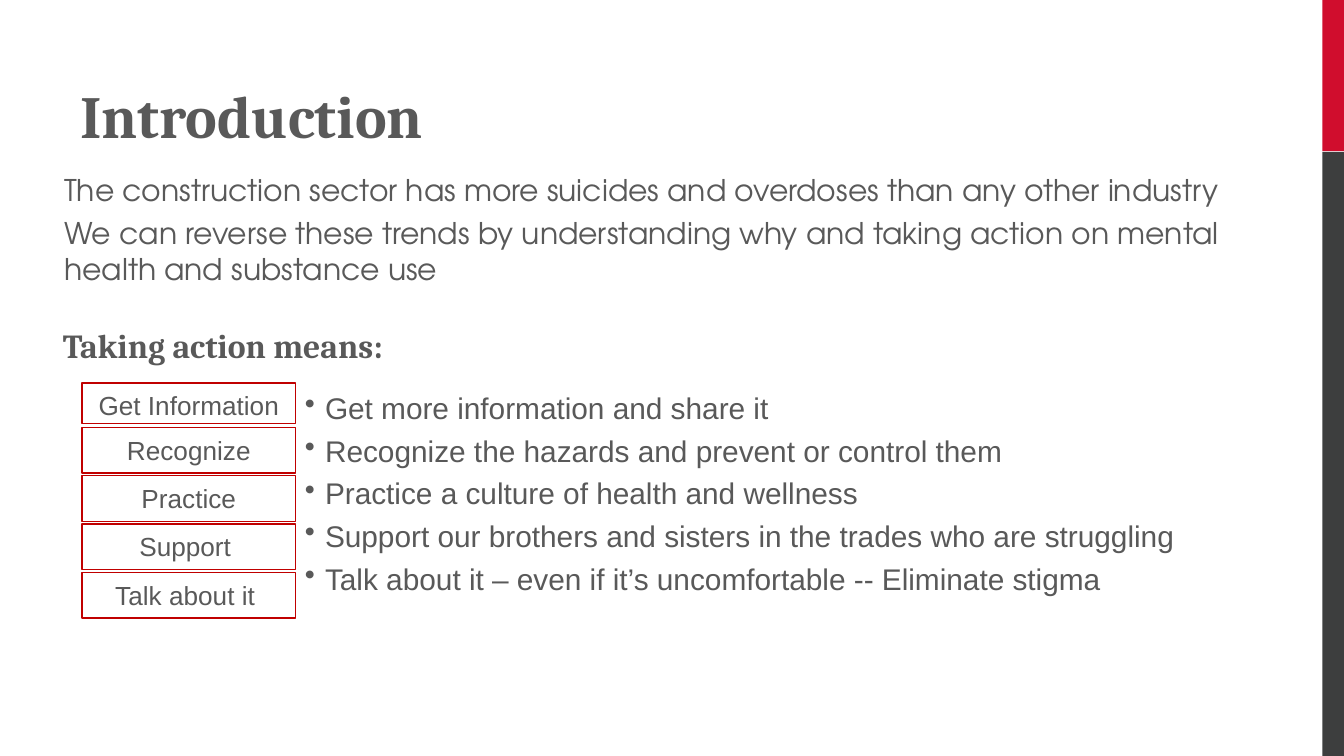
from dataclasses import dataclass

import pptx
import pptx.dml.color
import pptx.enum.shapes
import pptx.enum.text
import pptx.oxml.ns
import pptx.util
from lxml import etree

COLUMNS, ROWS = 100, 56.25  # grid cells of a tenth of an inch
ALIGN = pptx.enum.text.PP_ALIGN
ANCHOR = pptx.enum.text.MSO_ANCHOR


@dataclass(frozen=True)
class Theme:
    text: str = "595959"
    paper: str = "FFFFFF"
    outline: str = "C00000"
    accent: str = "D00D2D"
    dark: str = "3D3E3E"
    heading_font: str = "Cambria"
    body_font: str = "TeX Gyre Adventor"
    list_font: str = "Arial"
    title_size: int = 32
    subtitle_size: int = 18
    body_size: int = 16
    label_size: int = 14
    gap: float = 3.7


class SlideBuilder:
    def __init__(self, deck, theme):
        self.theme = theme
        self.cell_width = deck.slide_width / COLUMNS
        self.cell_height = deck.slide_height / ROWS
        self.page = deck.slides.add_slide(deck.slide_layouts[6])

    def place(self, column, row, columns, rows):
        return (round(column * self.cell_width), round(row * self.cell_height),
                round(columns * self.cell_width), round(rows * self.cell_height))

    def color(self, value):
        return pptx.dml.color.RGBColor.from_string(value)

    def fill_text(self, box, lines, font, size, bold=False, align=ALIGN.LEFT,
                  anchor=ANCHOR.TOP, bullet=False):
        frame = box.text_frame
        frame.word_wrap = True
        frame.vertical_anchor = anchor
        for index, line in enumerate(lines):
            para = frame.add_paragraph() if index else frame.paragraphs[0]
            para.alignment = align
            if index:
                para.space_before = pptx.util.Pt(self.theme.gap)
            if bullet:
                self.add_bullet(para)
            span = para.add_run()
            span.text = line
            span.font.name = font
            span.font.size = pptx.util.Pt(size)
            span.font.bold = bold
            span.font.color.rgb = self.color(self.theme.text)

    def add_bullet(self, para):
        properties = para._p.get_or_add_pPr()
        properties.set("marL", str(pptx.util.Inches(0.38)))
        properties.set("indent", str(pptx.util.Inches(-0.15)))
        mark = etree.SubElement(properties, pptx.oxml.ns.qn("a:buChar"))
        mark.set("char", "•")

    def text(self, area, lines, font, size, **style):
        box = self.page.shapes.add_textbox(*self.place(*area))
        self.fill_text(box, lines, font, size, **style)

    def panel(self, area, fill, outline=None):
        box = self.page.shapes.add_shape(
            pptx.enum.shapes.MSO_SHAPE.RECTANGLE, *self.place(*area))
        box.shadow.inherit = False
        box.fill.solid()
        box.fill.fore_color.rgb = self.color(fill)
        if outline:
            box.line.color.rgb = self.color(outline)
            box.line.width = pptx.util.Pt(0.75)
        else:
            box.line.fill.background()
        return box

    def label(self, area, caption):
        box = self.panel(area, self.theme.paper, self.theme.outline)
        self.fill_text(box, [caption], self.theme.list_font, self.theme.label_size,
                       align=ALIGN.CENTER)


def main():
    deck = pptx.Presentation()
    deck.slide_width = pptx.util.Inches(10)
    deck.slide_height = pptx.util.Inches(5.625)
    theme = Theme()
    slide = SlideBuilder(deck, theme)

    # Side band
    slide.panel((98.4, 0, 1.6, 11.25), theme.accent)
    slide.panel((98.4, 11.3, 1.6, 44.95), theme.dark)

    # Title and opening statement
    slide.text((5, 2.3, 90, 9.4), ["Introduction"], theme.heading_font,
               theme.title_size, bold=True, anchor=ANCHOR.BOTTOM)
    slide.text((3.8, 12.3, 92.5, 13.6), [
        "The construction sector has more suicides and overdoses than any other industry",
        "We can reverse these trends by understanding why and taking action on mental "
        "health and substance use",
    ], theme.body_font, theme.body_size)

    # Actions
    slide.text((3.7, 22.5, 44.2, 5.2), ["Taking action means:"], theme.heading_font,
               theme.subtitle_size, bold=True, anchor=ANCHOR.BOTTOM)
    slide.text((19.4, 28.5, 74.5, 17), [
        "Get more information and share it",
        "Recognize the hazards and prevent or control them",
        "Practice a culture of health and wellness",
        "Support our brothers and sisters in the trades who are struggling",
        "Talk about it – even if it’s uncomfortable -- Eliminate stigma",
    ], theme.list_font, theme.body_size, bullet=True)

    # Labels: a shorter first box above an evenly spaced stack
    slide.label((6.1, 28.5, 15.9, 3), "Get Information ")
    for index, caption in enumerate(["Recognize", "Practice", "Support ", "Talk about it "]):
        slide.label((6.1, 31.8 + 3.6 * index, 15.9, 3.4), caption)

    deck.save("out.pptx")


if __name__ == "__main__":
    main()
